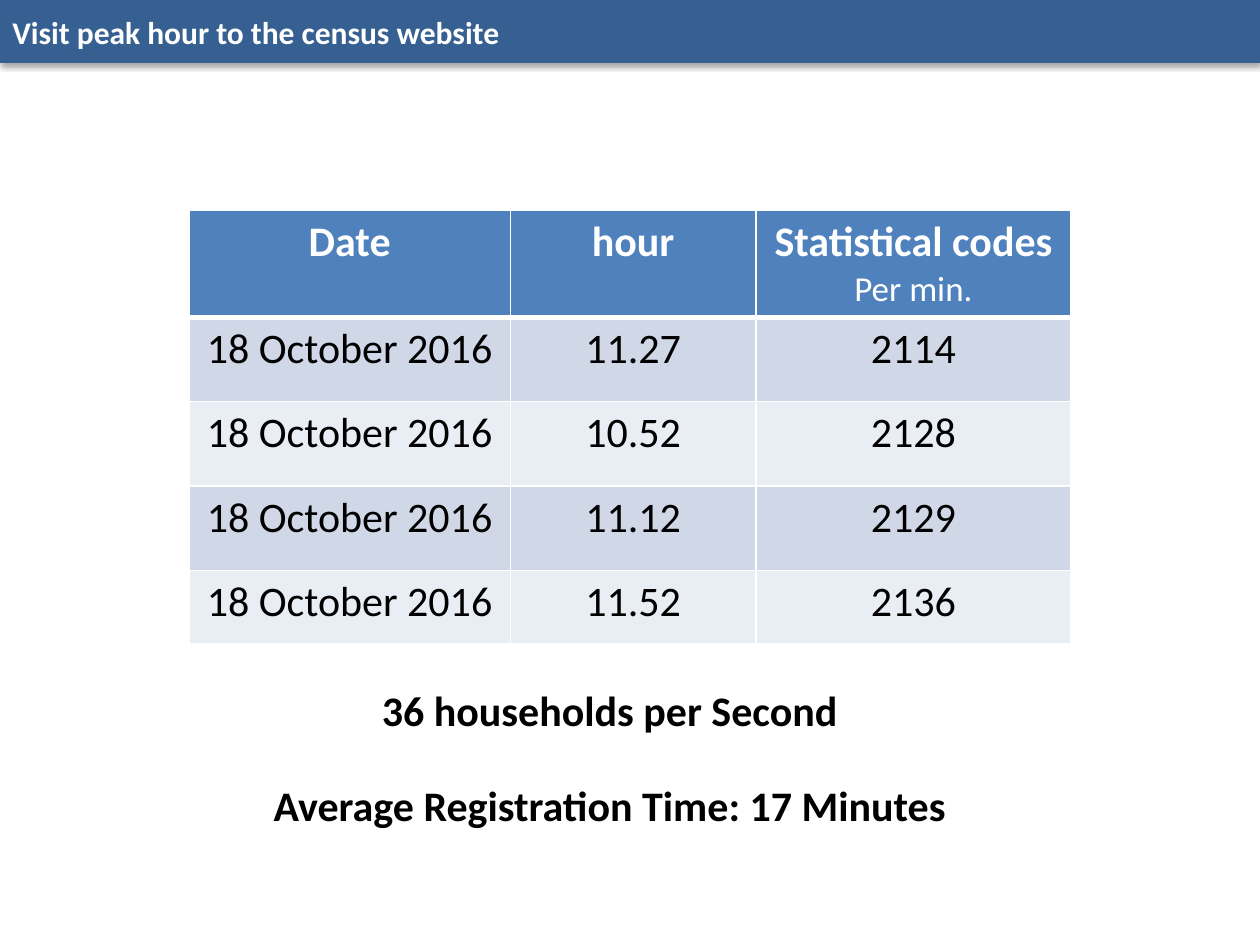
from lxml.etree import SubElement
from pptx import Presentation
from pptx.dml.color import RGBColor
from pptx.enum.shapes import MSO_SHAPE
from pptx.enum.text import MSO_ANCHOR, PP_ALIGN
from pptx.oxml.ns import qn
from pptx.util import Inches, Pt

COLORS = {
    "bar": "376092",
    "header": "4F81BD",
    "band_dark": "D0D8E8",
    "band_light": "E9EDF4",
    "white": "FFFFFF",
    "black": "000000",
}
FONT = "Calibri"
COLUMN_WIDTHS = [2.55, 1.95, 2.5]
ROW_HEIGHTS = [0.67, 0.67, 0.67, 0.67, 0.58]
HEADINGS = ["Date", "hour", "Statistical codes"]
DAY = "18 October 2016"
PEAKS = [("11.27", "2114"), ("10.52", "2128"), ("11.12", "2129"), ("11.52", "2136")]


def rgb(name):
    return RGBColor.from_string(COLORS[name])


def fill_with(part, color):
    part.fill.solid()
    part.fill.fore_color.rgb = rgb(color)


def add_run(paragraph, text, size, color, bold=False, align=PP_ALIGN.CENTER):
    paragraph.alignment = align
    run = paragraph.add_run()
    run.text = text
    run.font.name = FONT
    run.font.size = Pt(size)
    run.font.bold = bold
    run.font.color.rgb = rgb(color)


def add_shadow(shape):
    shape.shadow.inherit = False
    effects = shape._element.spPr.find(qn("a:effectLst"))
    shadow = SubElement(effects, qn("a:outerShdw"), blurRad=str(Pt(3.1)),
                        dist=str(Pt(1.8)), dir="5400000", rotWithShape="0")
    shade = SubElement(shadow, qn("a:srgbClr"), val=COLORS["black"])
    SubElement(shade, qn("a:alpha"), val="35000")


def set_borders(cell, top=1, bottom=1):
    # Borders must come before the fill in the cell properties
    properties = cell._tc.get_or_add_tcPr()
    for side, width in (("L", 1), ("R", 1), ("T", top), ("B", bottom)):
        line = SubElement(properties, qn(f"a:ln{side}"), w=str(Pt(width)))
        solid = SubElement(line, qn("a:solidFill"))
        SubElement(solid, qn("a:srgbClr"), val=COLORS["white"])


def add_title_bar(slide, text):
    bar = slide.shapes.add_shape(MSO_SHAPE.RECTANGLE, 0, 0, Inches(10), Inches(0.5))
    fill_with(bar, "bar")
    bar.line.fill.background()
    add_shadow(bar)
    bar.text_frame.word_wrap = True
    bar.text_frame.vertical_anchor = MSO_ANCHOR.MIDDLE
    add_run(bar.text_frame.paragraphs[0], text, 18, "white", True, PP_ALIGN.LEFT)


def add_peak_table(slide):
    rows = [HEADINGS] + [(DAY, hour, codes) for hour, codes in PEAKS]
    peaks = slide.shapes.add_table(len(rows), len(HEADINGS), Inches(1.5), Inches(1.67),
                                   Inches(7), Inches(sum(ROW_HEIGHTS))).table
    for column, width in zip(peaks.columns, COLUMN_WIDTHS):
        column.width = Inches(width)
    for row, height in zip(peaks.rows, ROW_HEIGHTS):
        row.height = Inches(height)

    for r, values in enumerate(rows):
        is_header = r == 0
        band = "header" if is_header else "band_dark" if r % 2 else "band_light"
        for c, value in enumerate(values):
            cell = peaks.cell(r, c)
            set_borders(cell, top=3 if r == 1 else 1, bottom=3 if is_header else 1)
            fill_with(cell, band)
            add_run(cell.text_frame.paragraphs[0], value, 24,
                    "white" if is_header else "black", is_header)

    # Unit under the last heading
    unit = peaks.cell(0, 2).text_frame.add_paragraph()
    add_run(unit, "Per min.", 20, "white")


def add_summary(slide, first, second):
    summary = slide.shapes.add_textbox(Inches(1.42), Inches(5.38),
                                       Inches(6.84), Inches(1.65)).text_frame
    summary.word_wrap = True
    add_run(summary.paragraphs[0], first, 24, "black", True)
    average = summary.add_paragraph()
    average.space_before = Pt(26)
    add_run(average, second, 24, "black", True)


def main():
    deck = Presentation()
    deck.slide_width, deck.slide_height = Inches(10), Inches(7.5)
    slide = deck.slides.add_slide(deck.slide_layouts[6])

    add_title_bar(slide, "Visit peak hour to the census website")
    add_peak_table(slide)
    add_summary(slide, "36 households per Second",
                "Average Registration Time: 17 Minutes")
    deck.save("out.pptx")


if __name__ == "__main__":
    main()
